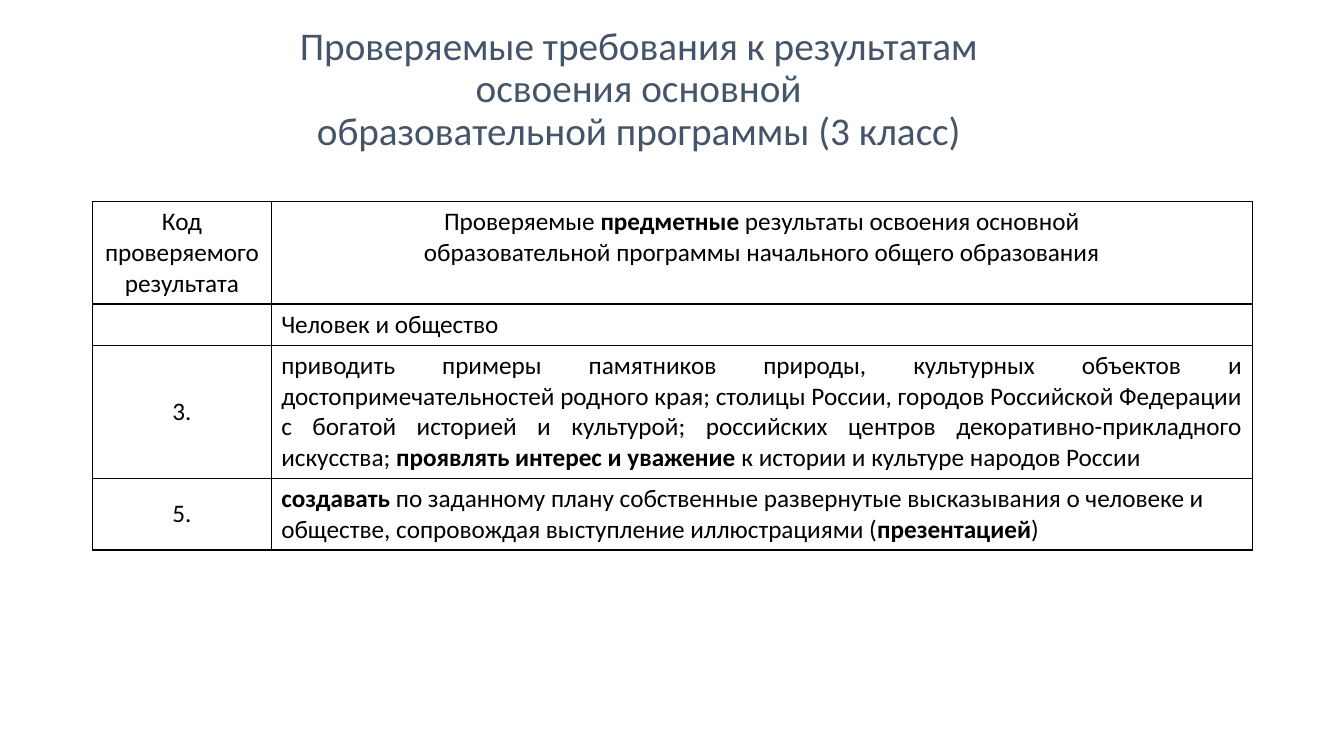
from lxml import etree
from pptx import Presentation
from pptx.dml.color import RGBColor
from pptx.enum import text
from pptx.oxml import ns
from pptx.util import Inches, Pt

COLORS = {"title": "44546A", "ink": "000000"}
LEFT, MID, JUST = text.PP_ALIGN.LEFT, text.PP_ALIGN.CENTER, text.PP_ALIGN.JUSTIFY
TOP, CENTER = text.MSO_ANCHOR.TOP, text.MSO_ANCHOR.MIDDLE


def write(frame, words, size=18, color="ink", align=LEFT, space=None):
    for i, line in enumerate(words.split("\n")):
        para = frame.paragraphs[0] if i == 0 else frame.add_paragraph()
        para.alignment = align
        para.line_spacing = space
        para.font.size = Pt(size)
        for j, part in enumerate(line.split("*")):
            for k, piece in enumerate(part.split("\v")):
                if k:
                    para.add_line_break()
                if piece:
                    run = para.add_run()
                    run.text = piece
                    run.font.name = "Calibri"
                    run.font.size = Pt(size)
                    run.font.bold = j % 2 == 1
                    run.font.color.rgb = RGBColor.from_string(COLORS[color])


def border(cell):
    props = cell._tc.get_or_add_tcPr()
    for i, side in enumerate(("lnL", "lnR", "lnT", "lnB")):
        line = etree.Element(ns.qn("a:" + side), w=str(Pt(1)))
        fill = etree.SubElement(line, ns.qn("a:solidFill"))
        etree.SubElement(fill, ns.qn("a:srgbClr"), val=COLORS["ink"])
        props.insert(i, line)


deck = Presentation()
deck.slide_width, deck.slide_height = Inches(13.33), Inches(7.5)
slide = deck.slides.add_slide(deck.slide_layouts[5])

title = slide.shapes.title
title.left, title.top = Inches(2.26), Inches(0.17)
title.width, title.height = Inches(8.15), Inches(1.45)
title.text_frame.auto_size = text.MSO_AUTO_SIZE.NONE
title.text_frame.vertical_anchor = CENTER
write(
    title.text_frame,
    "Проверяемые требования к результатам освоения основной\v"
    "образовательной программы (3 класс)",
    size=28, color="title", align=MID, space=0.9,
)

rows = [
    (1.01, "Код\nпроверяемого\nрезультата", TOP,
     "Проверяемые *предметные* результаты освоения основной\n"
     "образовательной программы начального общего образования", MID),
    (0.41, "", TOP, "Человек и общество", LEFT),
    (1.32, "3.", CENTER,
     "приводить примеры памятников природы, культурных объектов и "
     "достопримечательностей родного края; столицы России, городов "
     "Российской Федерации с богатой историей и культурой; российских "
     "центров декоративно-прикладного искусства; *проявлять интерес и "
     "уважение* к истории и культуре народов России", JUST),
    (0.71, "5.", CENTER,
     "*создавать* по заданному плану собственные развернутые высказывания "
     "о человеке и обществе, сопровождая выступление иллюстрациями "
     "(*презентацией*)", LEFT),
]
high = sum(row[0] for row in rows)
table = slide.shapes.add_table(
    len(rows), 2, Inches(0.92), Inches(2), Inches(11.5), Inches(high)
).table
table.first_row = table.horz_banding = False
for col, width in zip(table.columns, (1.77, 9.73)):
    col.width = Inches(width)

for r, (height, code, anchor, result, align) in enumerate(rows):
    table.rows[r].height = Inches(height)
    for c, (words, place, side) in enumerate(
        [(code, anchor, MID), (result, TOP, align)]
    ):
        cell = table.cell(r, c)
        cell.fill.background()
        cell.vertical_anchor = place
        border(cell)
        write(cell.text_frame, words, align=side)

deck.save("out.pptx")
